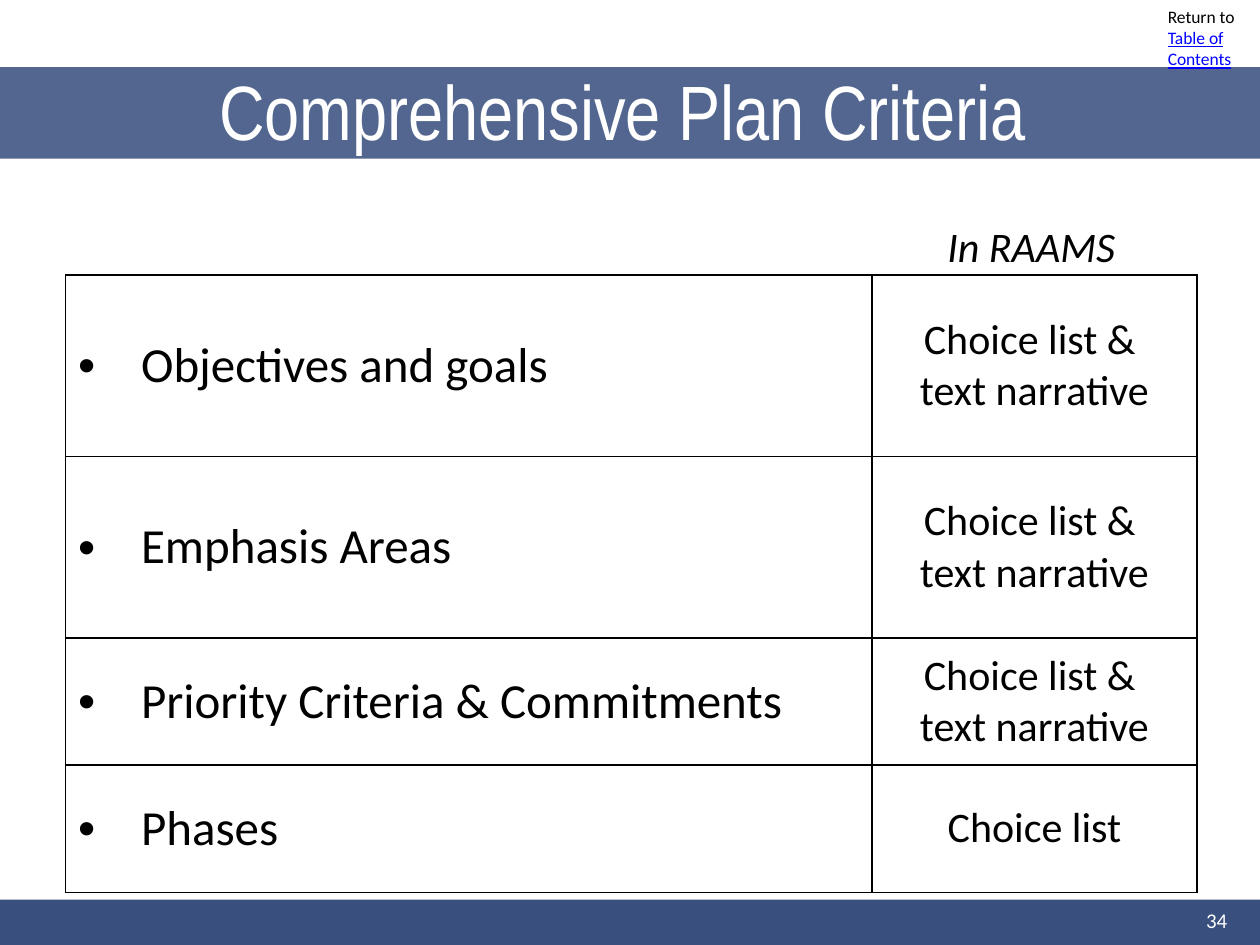
from lxml import etree
from pptx import Presentation
from pptx import util as u
from pptx.dml.color import RGBColor
from pptx.enum import shapes, text
from pptx.oxml import ns

NAVY = RGBColor(0x39, 0x50, 0x7F)
BLACK = RGBColor(0, 0, 0)
WHITE = RGBColor(0xFF, 0xFF, 0xFF)
LINK_BLUE = RGBColor(0, 0, 0xFF)

WIDTH, HEIGHT = u.Inches(10), u.Inches(7.5)
BODY_FONT, TITLE_FONT = "Calibri", "Arial Narrow"
COLUMNS = (6.4, 2.58)
ROWS = (1.44, 1.44, 1.01, 1.01)
BORDER_WIDTH = u.Pt(1)
BULLET_INDENT = u.Inches(0.5)

NARRATIVE = "Choice list & \vtext narrative"
CRITERIA = (
    ("Objectives and goals", NARRATIVE),
    ("Emphasis Areas", NARRATIVE),
    ("Priority Criteria & Commitments", NARRATIVE),
    ("Phases", "Choice list"),
)


def add_xml(parent, tag, **attributes):
    return etree.SubElement(parent, ns.qn(tag), attributes)


def set_font(font, color=BLACK, **values):
    for name, value in {"name": BODY_FONT, **values}.items():
        setattr(font, name, value)
    font.color.rgb = color


def add_band(slide, top, height, opacity=100):
    """Full-width bar; top and height are shares of the slide height."""
    band = slide.shapes.add_shape(
        shapes.MSO_SHAPE.RECTANGLE, 0, int(HEIGHT * top), WIDTH, int(HEIGHT * height))
    band.shadow.inherit = False
    band.fill.solid()
    band.fill.fore_color.rgb = NAVY
    band.line.fill.background()
    if opacity < 100:
        color = band.fill._xPr.find(".//" + ns.qn("a:srgbClr"))
        add_xml(color, "a:alpha", val=str(opacity * 1000))


def add_label(slide, area, runs, align=text.PP_ALIGN.LEFT, anchor=text.MSO_ANCHOR.TOP):
    """Text box; area holds left, top, width, height as shares of the slide."""
    left, top, width, height = area
    frame = slide.shapes.add_textbox(
        int(WIDTH * left), int(HEIGHT * top),
        int(WIDTH * width), int(HEIGHT * height)).text_frame
    frame.word_wrap = True
    frame.vertical_anchor = anchor
    paragraph = frame.paragraphs[0]
    paragraph.alignment = align
    for wording, style in runs:
        run = paragraph.add_run()
        run.text = wording
        set_font(run.font, **style)


def add_bullet(paragraph):
    properties = paragraph._p.get_or_add_pPr()
    properties.set("marL", str(BULLET_INDENT))
    properties.set("indent", str(-BULLET_INDENT))
    add_xml(properties, "a:buFont", typeface="Arial")
    add_xml(properties, "a:buChar", char="•")


def add_borders(cell):
    properties = cell._tc.get_or_add_tcPr()
    for position, side in enumerate(("a:lnL", "a:lnR", "a:lnT", "a:lnB")):
        line = etree.Element(ns.qn(side), {"w": str(BORDER_WIDTH)})
        add_xml(add_xml(line, "a:solidFill"), "a:srgbClr", val=str(BLACK))
        properties.insert(position, line)


def fill_cell(cell, wording, size, bulleted):
    cell.fill.background()
    cell.vertical_anchor = text.MSO_ANCHOR.MIDDLE
    cell.text = wording
    paragraph = cell.text_frame.paragraphs[0]
    if bulleted:
        add_bullet(paragraph)
    else:
        paragraph.alignment = text.PP_ALIGN.CENTER
    for run in paragraph.runs:
        set_font(run.font, size=u.Pt(size))
    add_borders(cell)


def add_criteria_table(slide, left, top):
    table = slide.shapes.add_table(
        len(ROWS), len(COLUMNS), int(WIDTH * left), int(HEIGHT * top),
        u.Inches(sum(COLUMNS)), u.Inches(sum(ROWS))).table
    table.first_row = table.horz_banding = False
    for column, width in zip(table.columns, COLUMNS):
        column.width = u.Inches(width)
    for row, height, (criterion, entry) in zip(table.rows, ROWS, CRITERIA):
        row.height = u.Inches(height)
        fill_cell(row.cells[0], criterion, 28, bulleted=True)
        fill_cell(row.cells[1], entry, 24, bulleted=False)


def main():
    deck = Presentation()
    deck.slide_width, deck.slide_height = WIDTH, HEIGHT
    slide = deck.slides.add_slide(deck.slide_layouts[6])
    right, middle = text.PP_ALIGN.RIGHT, text.MSO_ANCHOR.MIDDLE

    add_band(slide, 0.952, 0.05)
    add_band(slide, 0.071, 0.097, opacity=87)
    small = {"size": u.Pt(10)}
    add_label(slide, (0.917, 0, 0.083, 0.08), [
        ("Return to ", small),
        ("Table of Contents", {**small, "color": LINK_BLUE, "underline": True})])
    add_label(slide, (0.164, 0.033, 0.711, 0.167), [
        ("Comprehensive Plan Criteria",
         {"name": TITLE_FONT, "size": u.Pt(44), "color": WHITE})], anchor=middle)
    add_label(slide, (-0.009, 0.227, 0.904, 0.66), [
        ("In RAAMS", {"size": u.Pt(24), "italic": True})], align=right)
    add_criteria_table(slide, 0.052, 0.291)
    add_label(slide, (0.751, 0.947, 0.233, 0.053), [
        ("34", {"size": u.Pt(12), "color": WHITE})], align=right, anchor=middle)
    deck.save("out.pptx")


if __name__ == "__main__":
    main()
